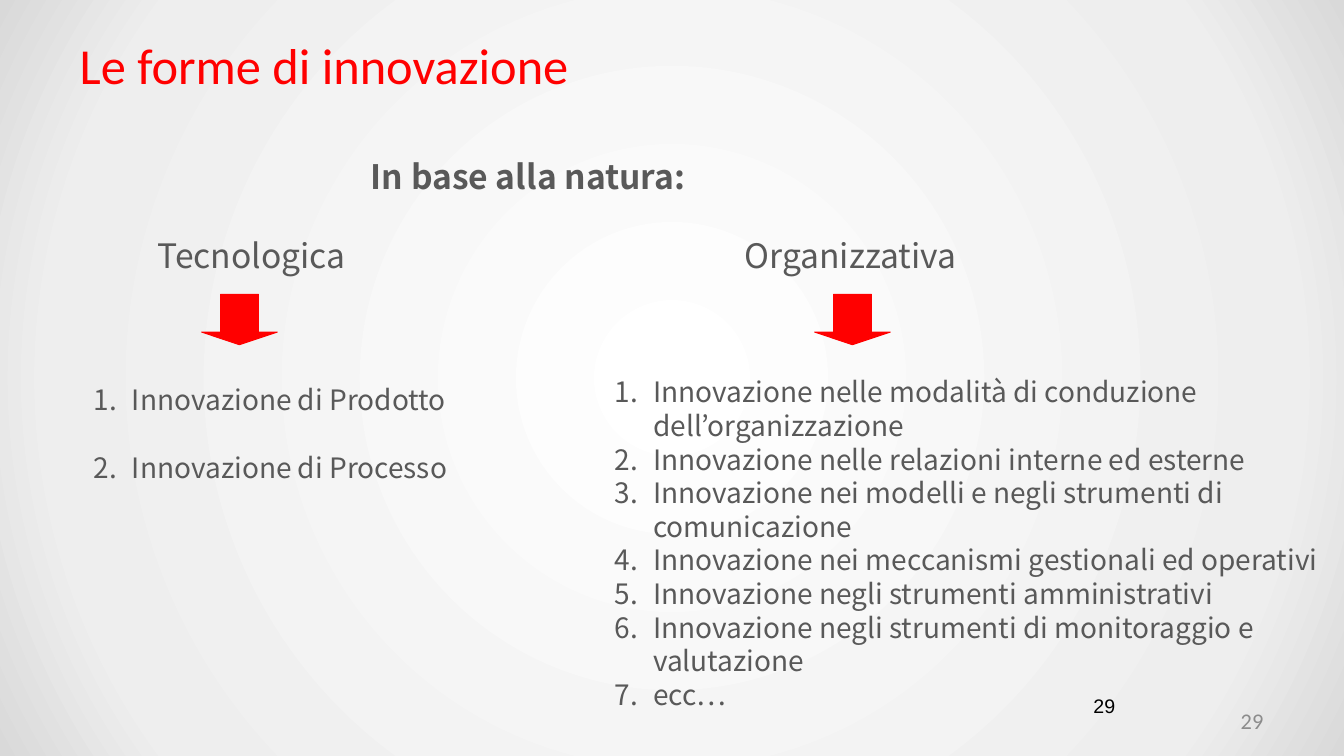
from dataclasses import dataclass

from pptx import Presentation
from pptx.dml.color import RGBColor
from pptx.enum.shapes import MSO_SHAPE
from pptx.enum.text import MSO_ANCHOR, PP_ALIGN
from pptx.oxml import parse_xml
from pptx.oxml.ns import nsdecls
from pptx.util import Inches, Pt

LEFT, CENTER, RIGHT = PP_ALIGN.LEFT, PP_ALIGN.CENTER, PP_ALIGN.RIGHT
TOP, MIDDLE = MSO_ANCHOR.TOP, MSO_ANCHOR.MIDDLE
DOWN_ARROW = MSO_SHAPE.DOWN_ARROW
ROUNDED = MSO_SHAPE.ROUNDED_RECTANGLE
TITLE_ONLY = 5
LINE_PITCH = 1.2


@dataclass(frozen=True)
class Theme:
    body_font: str = "Noto Sans CJK KR"
    title_font: str = "Calibri"
    number_font: str = "Arial"
    accent: str = "FF0000"
    body: str = "595959"
    black: str = "000000"
    muted: str = "8C8C8C"
    background: tuple = ((0, "FFFFFF"), (81, "EEEEEE"), (100, "D9D9D9"))
    title_size: int = 36
    heading_size: int = 24
    list_size: int = 20
    number_size: int = 14
    footer_size: int = 16


THEME = Theme()

PRODUCT_AND_PROCESS = ["Innovazione di Prodotto", "Innovazione di Processo"]
ORGANIZATION = [
    "Innovazione nelle modalità di conduzione dell’organizzazione",
    "Innovazione nelle relazioni interne ed esterne",
    "Innovazione nei modelli e negli strumenti di comunicazione",
    "Innovazione nei meccanismi gestionali ed operativi",
    "Innovazione negli strumenti amministrativi",
    "Innovazione negli strumenti di monitoraggio e valutazione",
    "ecc…",
]


def paint_background(page):
    """Fill the page with a gradient that spreads in circles from its centre."""
    stops = "".join(
        f'<a:gs pos="{place * 1000}"><a:srgbClr val="{color}"/></a:gs>'
        for place, color in THEME.background
    )
    background = parse_xml(
        f'<p:bg {nsdecls("p", "a")}><p:bgPr><a:gradFill rotWithShape="1">'
        f"<a:gsLst>{stops}</a:gsLst>"
        '<a:path path="circle">'
        '<a:fillToRect l="50000" t="50000" r="50000" b="50000"/></a:path>'
        "</a:gradFill><a:effectLst/></p:bgPr></p:bg>"
    )
    page.element.cSld.insert(0, background)


def style_paragraph(para, font, size, color, align=LEFT, bold=False):
    para.alignment = align
    para.font.name = font
    para.font.size = Pt(size)
    para.font.bold = bold
    para.font.color.rgb = RGBColor.from_string(color)


def style_body(para, size, align=LEFT, bold=False):
    style_paragraph(para, THEME.body_font, size, THEME.body, align, bold)
    para.line_spacing = Pt(size * LINE_PITCH)


def add_text_box(page, left, top, width, height):
    box = page.shapes.add_textbox(
        Inches(left), Inches(top), Inches(width), Inches(height)
    )
    box.text_frame.word_wrap = True
    return box.text_frame


def widen_margins(frame):
    frame.margin_left = frame.margin_right = Inches(0.13)
    frame.margin_top = frame.margin_bottom = Inches(0.07)
    frame.vertical_anchor = MIDDLE


def set_title(page, text):
    title = page.shapes.title
    title.left, title.top = Inches(0.66), Inches(0.25)
    title.width, title.height = Inches(12), Inches(0.78)
    frame = title.text_frame
    frame.text = text
    widen_margins(frame)
    style_paragraph(
        frame.paragraphs[0], THEME.title_font, THEME.title_size, THEME.accent
    )


def add_subtitle(page, text):
    para = add_text_box(page, 3.58, 1.5, 3.83, 0.5).paragraphs[0]
    para.text = text
    style_body(para, THEME.heading_size, bold=True)


def add_shape(page, kind, left, top, width, height):
    shape = page.shapes.add_shape(
        kind, Inches(left), Inches(top), Inches(width), Inches(height)
    )
    shape.shadow.inherit = False
    return shape


def add_heading(page, text, left, width):
    heading = add_shape(page, ROUNDED, left, 2.25, width, 0.56)
    heading.fill.background()
    heading.line.fill.background()
    frame = heading.text_frame
    frame.vertical_anchor = TOP
    para = frame.paragraphs[0]
    para.text = text
    style_body(para, THEME.heading_size, CENTER)


def add_down_arrow(page, left):
    arrow = add_shape(page, DOWN_ARROW, left, 2.92, 0.75, 0.5)
    arrow.adjustments[0], arrow.adjustments[1] = 0.5, 0.25
    color = RGBColor.from_string(THEME.accent)
    arrow.fill.solid()
    arrow.fill.fore_color.rgb = color
    arrow.line.color.rgb = color
    arrow.line.width = Pt(0.75)


def number_paragraph(para):
    properties = para._p.get_or_add_pPr()
    properties.set("marL", str(Inches(0.38)))
    properties.set("indent", str(-Inches(0.38)))
    properties.append(
        parse_xml(f'<a:buFont {nsdecls("a")} typeface="+mj-lt"/>')
    )
    properties.append(
        parse_xml(f'<a:buAutoNum {nsdecls("a")} type="arabicPeriod"/>')
    )
    # The schema wants the text defaults after the bullet.
    properties.append(properties.defRPr)


def add_numbered_list(page, items, left, top, width, height, gap=0):
    frame = add_text_box(page, left, top, width, height)
    for index, item in enumerate(items):
        para = frame.add_paragraph() if index else frame.paragraphs[0]
        para.text = item
        style_body(para, THEME.list_size)
        para.space_before = Pt(gap if index else 0)
        number_paragraph(para)


def add_page_numbers(page, text):
    para = add_text_box(page, 8.83, 6.83, 2.33, 0.52).paragraphs[0]
    para.text = text
    style_paragraph(
        para, THEME.number_font, THEME.number_size, THEME.black, RIGHT
    )
    frame = add_text_box(page, 9.55, 6.95, 3.11, 0.4)
    widen_margins(frame)
    frame.text = text
    style_paragraph(
        frame.paragraphs[0], THEME.title_font, THEME.footer_size, THEME.muted, RIGHT
    )


def main():
    deck = Presentation()
    deck.slide_width, deck.slide_height = Inches(13.33), Inches(7.5)
    page = deck.slides.add_slide(deck.slide_layouts[TITLE_ONLY])
    paint_background(page)
    set_title(page, "Le forme di innovazione")
    add_subtitle(page, "In base alla natura:")

    add_heading(page, "Tecnologica", 1.08, 2.83)
    add_down_arrow(page, 2)
    blank_line = THEME.list_size * LINE_PITCH
    add_numbered_list(
        page, PRODUCT_AND_PROCESS, 0.83, 3.75, 3.92, 1.11, gap=blank_line
    )

    add_heading(page, "Organizzativa", 6.58, 3.71)
    add_down_arrow(page, 8.08)
    add_numbered_list(page, ORGANIZATION, 6, 3.67, 7.33, 3.47)

    add_page_numbers(page, "29")
    deck.save("out.pptx")


if __name__ == "__main__":
    main()
